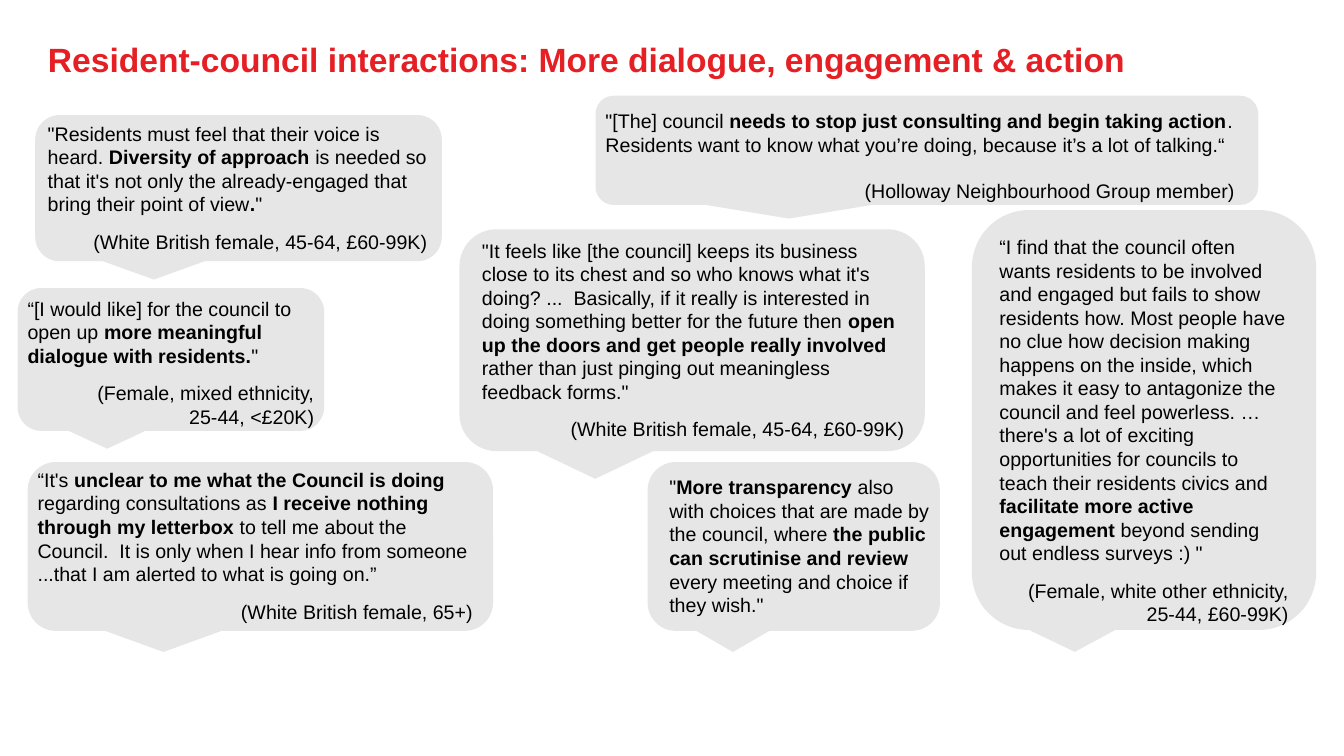
from dataclasses import dataclass

from pptx import Presentation
from pptx.dml.color import RGBColor
from pptx.enum.shapes import MSO_SHAPE as Preset
from pptx.enum.text import MSO_ANCHOR as Anchor, MSO_AUTO_SIZE as AutoSize, PP_ALIGN as Align
from pptx.util import Inches, Pt


@dataclass(frozen=True)
class Theme:
    font: str = "Arial"
    title_size: int = 24
    quote_size: int = 14
    title_color: str = "E51F23"
    quote_color: str = "000000"
    bubble_color: str = "E7E6E6"


theme = Theme()
presentation = Presentation()
presentation.slide_width = Inches(13.333)
presentation.slide_height = Inches(7.5)
column = presentation.slide_width / 160
row = presentation.slide_height / 90


def grid(left, top, width, height):
    return int(left * column), int(top * row), int(width * column), int(height * row)


def write(paragraph, text, *, size=theme.quote_size, color=theme.quote_color,
          align=Align.LEFT, spacing=1.0, before=0, after=0):
    paragraph.alignment = align
    paragraph.line_spacing = spacing
    paragraph.space_before = Pt(before)
    paragraph.space_after = Pt(after)
    for index, part in enumerate(text.split("**")):
        if part:
            run = paragraph.add_run()
            run.text = part
            run.font.name = theme.font
            run.font.size = Pt(size)
            run.font.bold = index % 2 == 1
            run.font.color.rgb = RGBColor.from_string(color)


slide = presentation.slides.add_slide(presentation.slide_layouts[5])
title = slide.shapes.title
title.left, title.top, title.width, title.height = grid(4.5, 4.2, 138, 6.2)
title.text_frame.word_wrap = True
title.text_frame.auto_size = AutoSize.NONE
title.text_frame.vertical_anchor = Anchor.MIDDLE
write(title.text_frame.paragraphs[0],
      "**Resident-council interactions: More dialogue, engagement & action**",
      size=theme.title_size, color=theme.title_color, spacing=0.9)

default_tail = (-0.208, 0.625)
quotes = [
    ((4.2, 13.7, 48.4, 17.4), (4.5, 13.9, 47.6, 14.8), default_tail, 0,
     "\"Residents must feel that their voice is heard. **Diversity of approach** is needed so "
     "that it's not only the already-engaged that bring their point of view**.**\"",
     ["(White British female, 45-64, £60-99K)"]),
    ((70.9, 11.4, 78.9, 13), (70.9, 12.4, 77.3, 10), default_tail, 6,
     "\"[The] council **needs to stop just consulting and begin taking action**. "
     "Residents want to know what you’re doing, because it’s a lot of talking.“",
     ["(Holloway Neighbourhood Group member)"]),
    ((2.1, 34.3, 36.5, 17), (2.1, 34.7, 36.5, 14.6), default_tail, 0,
     "“[I would like] for the council to open up **more meaningful dialogue with residents.**\"",
     ["(Female, mixed ethnicity,", "25-44, <£20K)"]),
    ((54.7, 27.3, 55.4, 26.4), (56.2, 27.8, 52.7, 24.6), default_tail, 0,
     "\"It feels like [the council] keeps its business close to its chest and so who knows what "
     "it's doing? ...  Basically, if it really is interested in doing something better for the "
     "future then **open up the doors and get people really involved** rather than just pinging "
     "out meaningless feedback forms.\"",
     ["(White British female, 45-64, £60-99K)"]),
    ((3.3, 55, 55.4, 20.1), (3.3, 55.1, 54.2, 18.1), default_tail, 0,
     "“It's **unclear to me what the Council is doing** regarding consultations as **I receive "
     "nothing through my letterbox** to tell me about the Council.  It is only when I hear info "
     "from someone ...that I am alerted to what is going on.”",
     ["(White British female, 65+)"]),
    ((77.1, 55, 34.8, 20.1), (78.5, 56, 33.5, 17.3), default_tail, 0,
     "\"**More transparency** also with choices that are made by the council, where **the public "
     "can scrutinise and review** every meeting and choice if they wish.\"",
     []),
    ((115.7, 25, 41, 50), (117.8, 27.4, 36.8, 47.8), (-0.201, 0.552), 0,
     "“I find that the council often wants residents to be involved and engaged but fails to show "
     "residents how. Most people have no clue how decision making happens on the inside, which "
     "makes it easy to antagonize the council and feel powerless. …there's a lot of exciting "
     "opportunities for councils to teach their residents civics and **facilitate more active "
     "engagement** beyond sending out endless surveys :) \"",
     ["(Female, white other ethnicity, 25-44, £60-99K)"]),
]

for bubble_area, text_area, tail, gap, quote, speaker_lines in quotes:
    bubble = slide.shapes.add_shape(Preset.ROUNDED_RECTANGULAR_CALLOUT, *grid(*bubble_area))
    bubble.adjustments[0], bubble.adjustments[1] = tail
    bubble.shadow.inherit = False
    bubble.fill.solid()
    bubble.fill.fore_color.rgb = RGBColor.from_string(theme.bubble_color)
    bubble.line.fill.background()

    text_frame = slide.shapes.add_textbox(*grid(*text_area)).text_frame
    text_frame.word_wrap = True
    write(text_frame.paragraphs[0], quote, after=gap)
    for index, line in enumerate(speaker_lines):
        write(text_frame.add_paragraph(), line, align=Align.RIGHT, before=0 if index else 10)

presentation.save("out.pptx")
